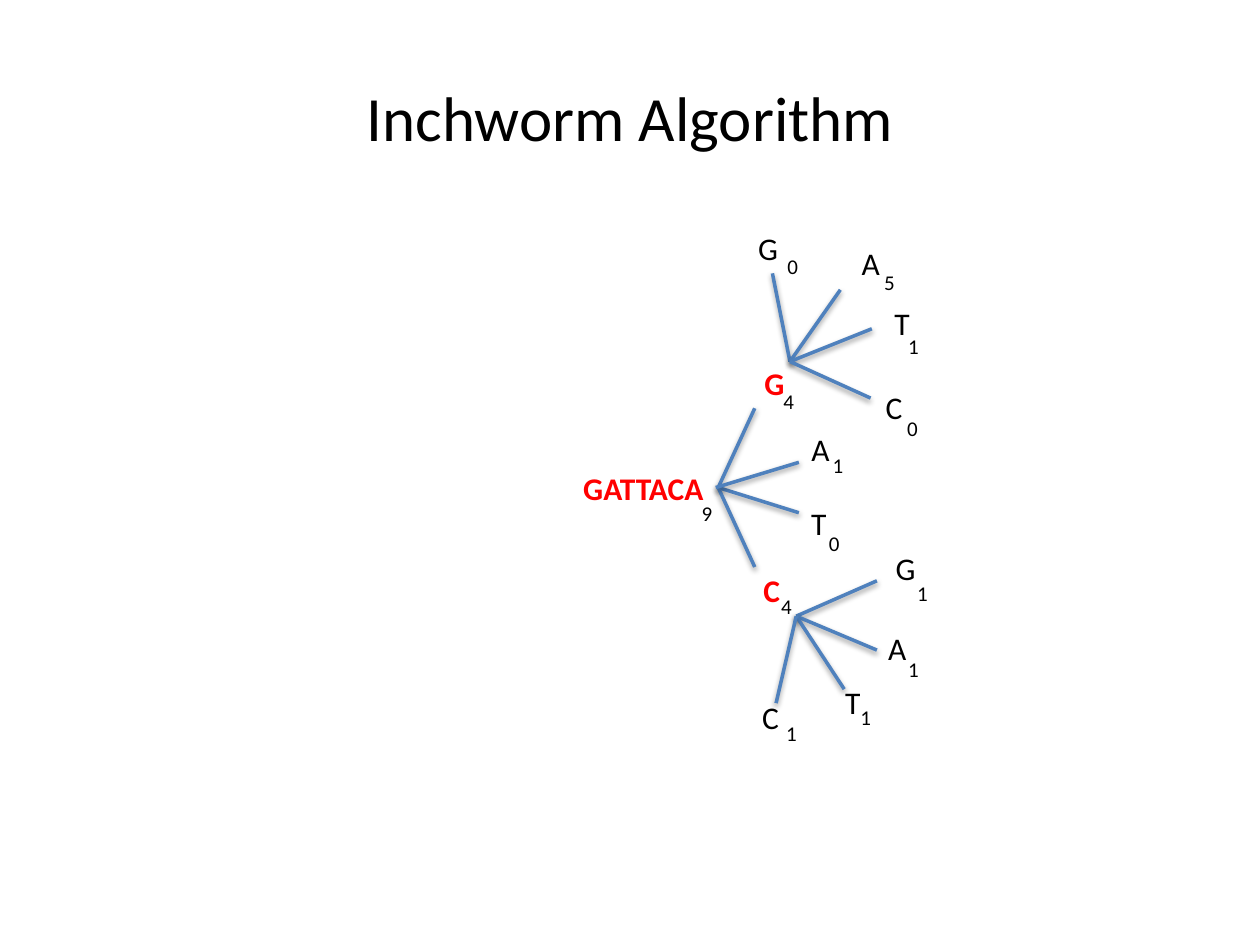
from dataclasses import dataclass

import lxml.etree
import pptx
import pptx.dml.color
import pptx.enum.shapes
import pptx.enum.text
import pptx.oxml
import pptx.oxml.ns
import pptx.slide
import pptx.text.text
import pptx.util

Point = tuple[float, float]

FONT = "Calibri"
BLACK = "000000"
RED = "FF0000"
BLUE = "4F81BD"
BASE_WIDTHS = {"GATTACA": 84.2, "G": 25.9, "A": 25.2, "T": 23.8, "C": 24.5}
SHADOW = (
    f"<a:effectLst {pptx.oxml.ns.nsdecls('a')}>"
    '<a:outerShdw blurRad="40000" dist="20000" dir="5400000" rotWithShape="0">'
    f'<a:srgbClr val="{BLACK}"><a:alpha val="38000"/></a:srgbClr>'
    "</a:outerShdw></a:effectLst>"
)


@dataclass
class Node:
    bases: str
    at: Point
    count: int
    count_at: Point
    chosen: bool = False
    wrapped_width: float = 0


@dataclass
class Fan:
    hub: Point
    tips: list[Point]


NODES = [
    Node("GATTACA", (326.2, 264.2), 9, (393.8, 282.2), chosen=True),
    Node("G", (429.8, 204.5), 4, (440.6, 218.2), chosen=True),
    Node("A", (456.5, 241.9), 1, (468.7, 254.9)),
    Node("T", (456.5, 284.4), 0, (466.6, 299.5)),
    Node("C", (429.1, 322.6), 4, (439.2, 335.5), chosen=True),
    Node("G", (426.2, 127.4), 0, (442.8, 141.1)),
    Node("A", (485.3, 136.1), 5, (498.2, 150.5)),
    Node("T", (504, 169.9), 1, (511.9, 187.2), wrapped_width=28.8),
    Node("C", (499, 218.2), 0, (511.2, 234)),
    Node("G", (504.7, 310.3), 1, (517, 328.3)),
    Node("A", (500.4, 355.7), 1, (511.9, 371.5)),
    Node("T", (475.9, 386.6), 1, (484.6, 398.9), wrapped_width=28.8),
    Node("C", (428.4, 395.3), 1, (442.1, 408.2)),
]

FANS = [
    Fan((410.4, 278.6), [(431.3, 233.3), (456.5, 293), (431.3, 324)]),
    Fan((409, 278.6), [(456.5, 264.2)]),
    Fan((455, 352.1), [(501.1, 331.9), (501.1, 371.5), (482.4, 393.8), (443.5, 401.8)]),
    Fan((451.4, 206.6), [(441.4, 156.2), (480.2, 165.6), (498.2, 187.9), (497.5, 227.5)]),
]


def color(value: str) -> pptx.dml.color.RGBColor:
    return pptx.dml.color.RGBColor.from_string(value)


def format_text(frame: pptx.text.text.TextFrame, size: float, value: str, bold: bool = False) -> None:
    for para in frame.paragraphs:
        for span in para.runs:
            span.font.name = FONT
            span.font.size = pptx.util.Pt(size)
            span.font.bold = bold
            span.font.color.rgb = color(value)


def add_title(page: pptx.slide.Slide, text: str) -> None:
    title = page.shapes.title
    title.left, title.top = pptx.util.Pt(36), pptx.util.Pt(21.6)
    title.width, title.height = pptx.util.Pt(648), pptx.util.Pt(90)
    frame = title.text_frame
    frame.text = text
    frame.vertical_anchor = pptx.enum.text.MSO_ANCHOR.MIDDLE
    frame.paragraphs[0].alignment = pptx.enum.text.PP_ALIGN.CENTER
    format_text(frame, 36, BLACK)


def add_label(page: pptx.slide.Slide, text: str, at: Point, extent: Point, size: float,
              value: str = BLACK, bold: bool = False, wrap: bool = False) -> None:
    box = page.shapes.add_textbox(*(pptx.util.Pt(length) for length in at + extent))
    frame = box.text_frame
    frame.text = text
    frame.word_wrap = wrap
    frame.auto_size = pptx.enum.text.MSO_AUTO_SIZE.SHAPE_TO_FIT_TEXT
    format_text(frame, size, value, bold)


def add_node(page: pptx.slide.Slide, node: Node) -> None:
    width = node.wrapped_width or BASE_WIDTHS[node.bases]
    add_label(page, node.bases, node.at, (width, 29), 18,
              RED if node.chosen else BLACK, node.chosen, node.wrapped_width > 0)
    add_label(page, str(node.count), node.count_at, (20.9, 21.8), 12)


def add_fan(page: pptx.slide.Slide, fan: Fan) -> None:
    for tip in fan.tips:
        line = page.shapes.add_connector(
            pptx.enum.shapes.MSO_CONNECTOR.STRAIGHT,
            *(pptx.util.Pt(length) for length in fan.hub + tip),
        )
        line.line.color.rgb = color(BLUE)
        line.line.width = pptx.util.Pt(2)
        line._element.spPr.append(pptx.oxml.parse_xml(SHADOW))


def main() -> None:
    deck = pptx.Presentation()
    deck.slide_width, deck.slide_height = pptx.util.Pt(720), pptx.util.Pt(540)
    page = deck.slides.add_slide(deck.slide_layouts[5])
    add_title(page, "Inchworm Algorithm")
    for fan in FANS:
        add_fan(page, fan)
    for node in NODES:
        add_node(page, node)
    deck.save("out.pptx")


if __name__ == "__main__":
    main()
